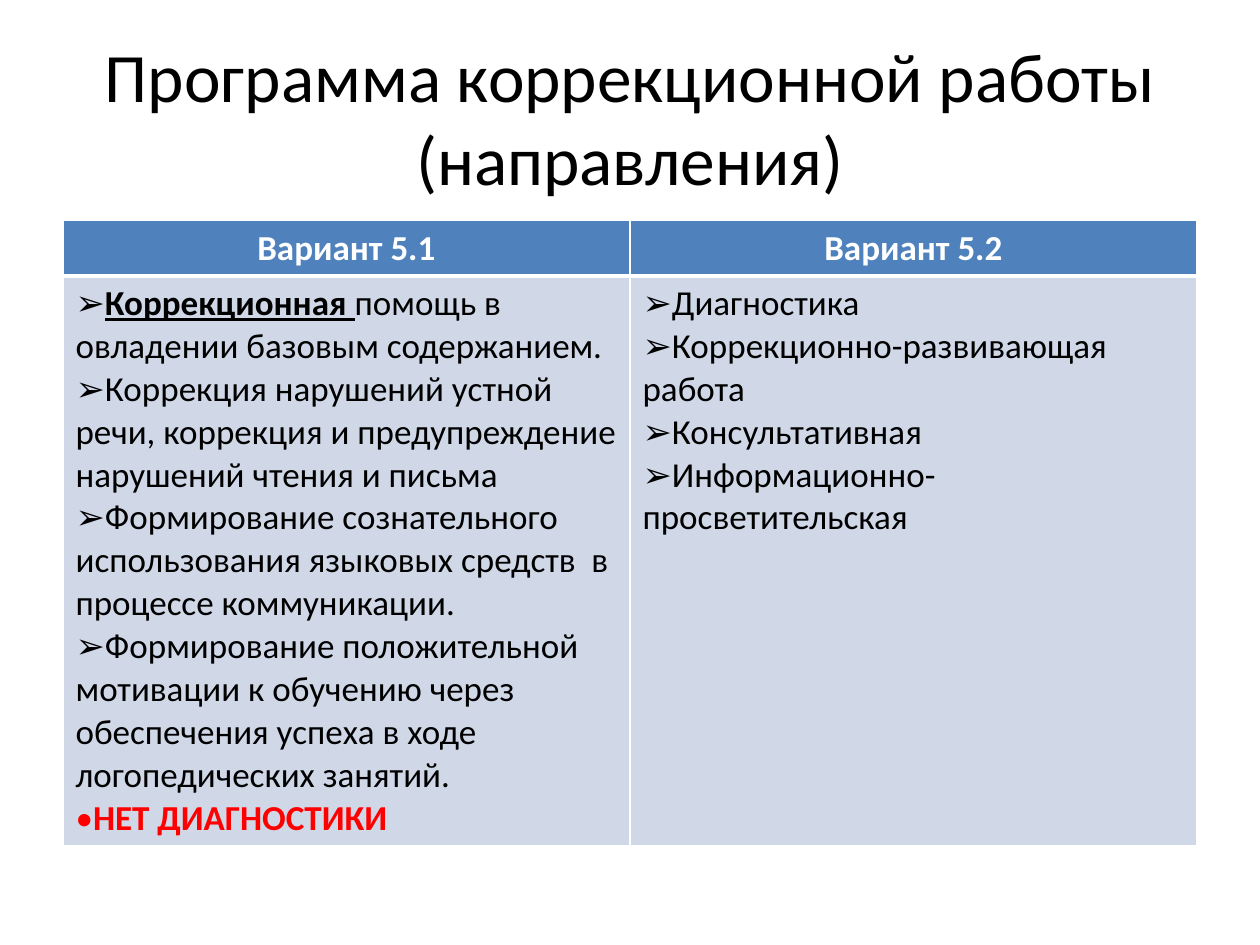
from lxml import etree
from pptx import Presentation
from pptx.dml.color import RGBColor
from pptx.enum.text import MSO_ANCHOR, MSO_AUTO_SIZE, PP_ALIGN
from pptx.oxml.ns import qn
from pptx.util import Inches, Pt

CENTER, LEFT = PP_ALIGN.CENTER, PP_ALIGN.LEFT
MIDDLE = MSO_ANCHOR.MIDDLE
NO_FIT = MSO_AUTO_SIZE.NONE
BLACK = RGBColor(0x00, 0x00, 0x00)
WHITE = RGBColor(0xFF, 0xFF, 0xFF)
RED = RGBColor(0xFF, 0x00, 0x00)
BLUE = RGBColor(0x4F, 0x81, 0xBD)
PALE_BLUE = RGBColor(0xD0, 0xD8, 0xE8)

FONT = "Calibri"
TITLE = "Программа коррекционной работы (направления)"
TITLE_FORMAT = {"name": FONT, "size": Pt(39.6), "color": BLACK}
BODY = {"name": FONT, "size": Pt(20), "bold": False, "color": BLACK}
HEADER = {**BODY, "bold": True, "color": WHITE}
KEYWORD = {**BODY, "bold": True, "underline": True}
WARNING = {**BODY, "bold": True, "color": RED}
ARROW, DOT = "➢", "•"

VARIANTS = [
    ("Вариант 5.1", [
        (ARROW, [("Коррекционная ", KEYWORD), ("помощь в овладении базовым содержанием.", BODY)]),
        (ARROW, [("Коррекция нарушений устной речи, коррекция и предупреждение нарушений чтения и письма", BODY)]),
        (ARROW, [("Формирование сознательного использования языковых средств  в процессе коммуникации.", BODY)]),
        (ARROW, [("Формирование положительной мотивации к обучению через обеспечения успеха в ходе логопедических занятий.", BODY)]),
        (DOT, [("НЕТ ДИАГНОСТИКИ", WARNING)]),
    ]),
    ("Вариант 5.2", [
        (ARROW, [("Диагностика", BODY)]),
        (ARROW, [("Коррекционно-развивающая работа", BODY)]),
        (ARROW, [("Консультативная", BODY)]),
        (ARROW, [("Информационно-просветительская", BODY)]),
    ]),
]

SLIDE_WIDTH, SLIDE_HEIGHT = Inches(10), Inches(7.5)
MARGIN = int(SLIDE_WIDTH * 0.05)
CONTENT_WIDTH = SLIDE_WIDTH - 2 * MARGIN
TABLE_TOP = Inches(1.75)
ROW_HEIGHTS = [Inches(0.41), Inches(4.46)]


def add_span(para, text, formats):
    span = para.add_run()
    span.text = text
    for name, value in formats.items():
        if name == "color":
            span.font.color.rgb = value
        else:
            setattr(span.font, name, value)


def set_bullet(para, symbol):
    properties = para._p.get_or_add_pPr()
    etree.SubElement(properties, qn("a:buFont"), typeface=FONT)
    etree.SubElement(properties, qn("a:buChar"), char=symbol)


def set_borders(cell, widths):
    properties = cell._tc.get_or_add_tcPr()
    for index, (side, width) in enumerate(widths.items()):
        line = etree.Element(qn(f"a:ln{side}"), w=str(Pt(width)))
        fill = etree.SubElement(line, qn("a:solidFill"))
        etree.SubElement(fill, qn("a:srgbClr"), val=str(WHITE))
        properties.insert(index, line)


def fill_cell(cell, paragraphs, color, align, border):
    cell.fill.solid()
    cell.fill.fore_color.rgb = color
    set_borders(cell, {"L": 1, "R": 1, **border})
    for index, (symbol, spans) in enumerate(paragraphs):
        frame = cell.text_frame
        para = frame.add_paragraph() if index else frame.paragraphs[0]
        para.alignment = align
        if symbol:
            set_bullet(para, symbol)
        for text, formats in spans:
            add_span(para, text, formats)


def add_title(page):
    title = page.shapes.title
    title.left, title.top = MARGIN, Inches(0.3)
    title.width, title.height = CONTENT_WIDTH, Inches(1.25)
    frame = title.text_frame
    frame.auto_size = NO_FIT
    frame.vertical_anchor = MIDDLE
    para = frame.paragraphs[0]
    para.alignment = CENTER
    add_span(para, TITLE, TITLE_FORMAT)


def add_variants(page):
    table = page.shapes.add_table(
        len(ROW_HEIGHTS), len(VARIANTS), MARGIN, TABLE_TOP, CONTENT_WIDTH, sum(ROW_HEIGHTS)
    ).table
    for row, height in zip(table.rows, ROW_HEIGHTS):
        row.height = height
    for column, (heading, directions) in enumerate(VARIANTS):
        fill_cell(table.cell(0, column), [(None, [(heading, HEADER)])], BLUE, CENTER, {"T": 1, "B": 3})
        fill_cell(table.cell(1, column), directions, PALE_BLUE, LEFT, {"T": 3, "B": 1})


def main():
    deck = Presentation()
    deck.slide_width, deck.slide_height = SLIDE_WIDTH, SLIDE_HEIGHT
    page = deck.slides.add_slide(deck.slide_layouts[5])
    add_title(page)
    add_variants(page)
    deck.save("out.pptx")


if __name__ == "__main__":
    main()
